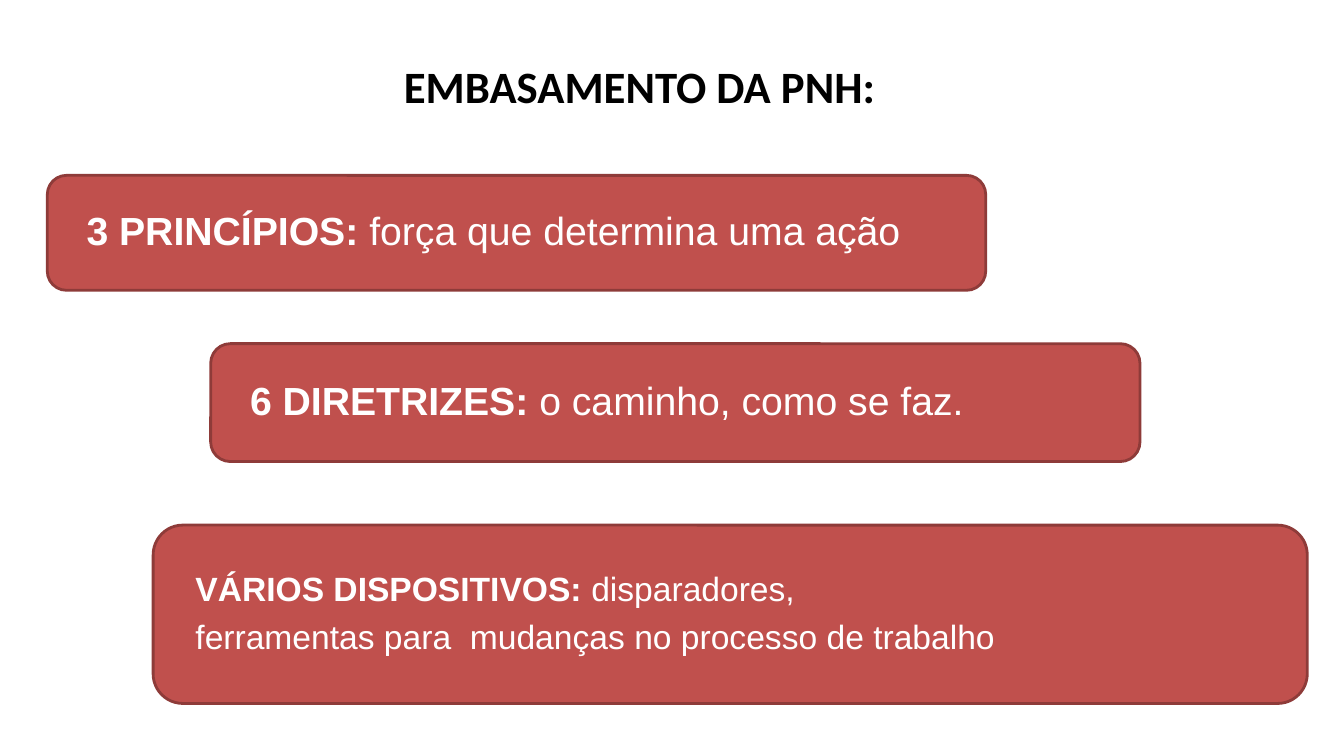
import dataclasses

import pptx
import pptx.dml.color
import pptx.enum.shapes
import pptx.enum.text
import pptx.util

Pt = pptx.util.Pt
Color = pptx.dml.color.RGBColor.from_string
Align = pptx.enum.text.PP_ALIGN
Anchor = pptx.enum.text.MSO_ANCHOR


@dataclasses.dataclass(frozen=True)
class Theme:
    title_font: str = "Calibri"
    body_font: str = "Arial"
    title_color: str = "000000"
    card_text: str = "FFFFFF"
    card_fill: str = "C0504D"
    card_line: str = "8E3B39"
    title_size: int = 32
    large_size: int = 28
    small_size: int = 24


THEME = Theme()

# Box (left, top, width, height), text size, paragraphs of (bold part, plain part)
TITLE_BOX = (49, 15.8, 815.8, 90)
CARDS = [
    ((33.8, 125.3, 670.3, 82.1), THEME.large_size,
     [("3 PRINCÍPIOS: ", "força que determina uma ação")]),
    ((150.5, 245.5, 663.8, 84.2), THEME.large_size,
     [("6 DIRETRIZES: ", "o caminho, como se faz.")]),
    ((109.4, 375.1, 824.4, 127.4), THEME.small_size,
     [("VÁRIOS DISPOSITIVOS: ", "disparadores,"),
      ("", "ferramentas para  mudanças no processo de trabalho")]),
]


def apply_format(target, values):
    for name, value in values.items():
        setattr(target, name, value)


def format_frame(frame, side, edge):
    apply_format(frame, {
        "word_wrap": True, "vertical_anchor": Anchor.MIDDLE,
        "margin_left": Pt(side), "margin_right": Pt(side),
        "margin_top": Pt(edge), "margin_bottom": Pt(edge),
    })


def add_run(paragraph, text, font_name, size, color, bold):
    run = paragraph.add_run()
    run.text = text
    apply_format(run.font, {"name": font_name, "size": Pt(size), "bold": bold})
    run.font.color.rgb = Color(color)


def add_title(slide, box, text):
    shape = slide.shapes.add_textbox(*map(Pt, box))
    format_frame(shape.text_frame, 7.2, 3.6)
    paragraph = shape.text_frame.paragraphs[0]
    paragraph.alignment = Align.CENTER
    add_run(paragraph, text, THEME.title_font, THEME.title_size, THEME.title_color, True)


def add_card(slide, box, size, lines):
    # Rounded panel
    shape = slide.shapes.add_shape(
        pptx.enum.shapes.MSO_SHAPE.ROUNDED_RECTANGLE, *map(Pt, box))
    shape.adjustments[0] = 1 / 6
    shape.shadow.inherit = False
    shape.fill.solid()
    shape.fill.fore_color.rgb = Color(THEME.card_fill)
    shape.line.color.rgb = Color(THEME.card_line)
    shape.line.width = Pt(2)

    # Term in bold, followed by its explanation
    frame = shape.text_frame
    format_frame(frame, 24, 0)
    for index, parts in enumerate(lines):
        paragraph = frame.add_paragraph() if index else frame.paragraphs[0]
        apply_format(paragraph, {
            "alignment": Align.LEFT, "line_spacing": 0.9,
            "space_before": Pt(8.4 if index else 0),
        })
        for text, bold in zip(parts, (True, False)):
            if text:
                add_run(paragraph, text, THEME.body_font, size, THEME.card_text, bold)


def main():
    presentation = pptx.Presentation()
    apply_format(presentation, {"slide_width": Pt(960), "slide_height": Pt(540)})
    slide = presentation.slides.add_slide(presentation.slide_layouts[6])
    add_title(slide, TITLE_BOX, "EMBASAMENTO DA PNH:")
    for box, size, lines in CARDS:
        add_card(slide, box, size, lines)
    presentation.save("out.pptx")


if __name__ == "__main__":
    main()
